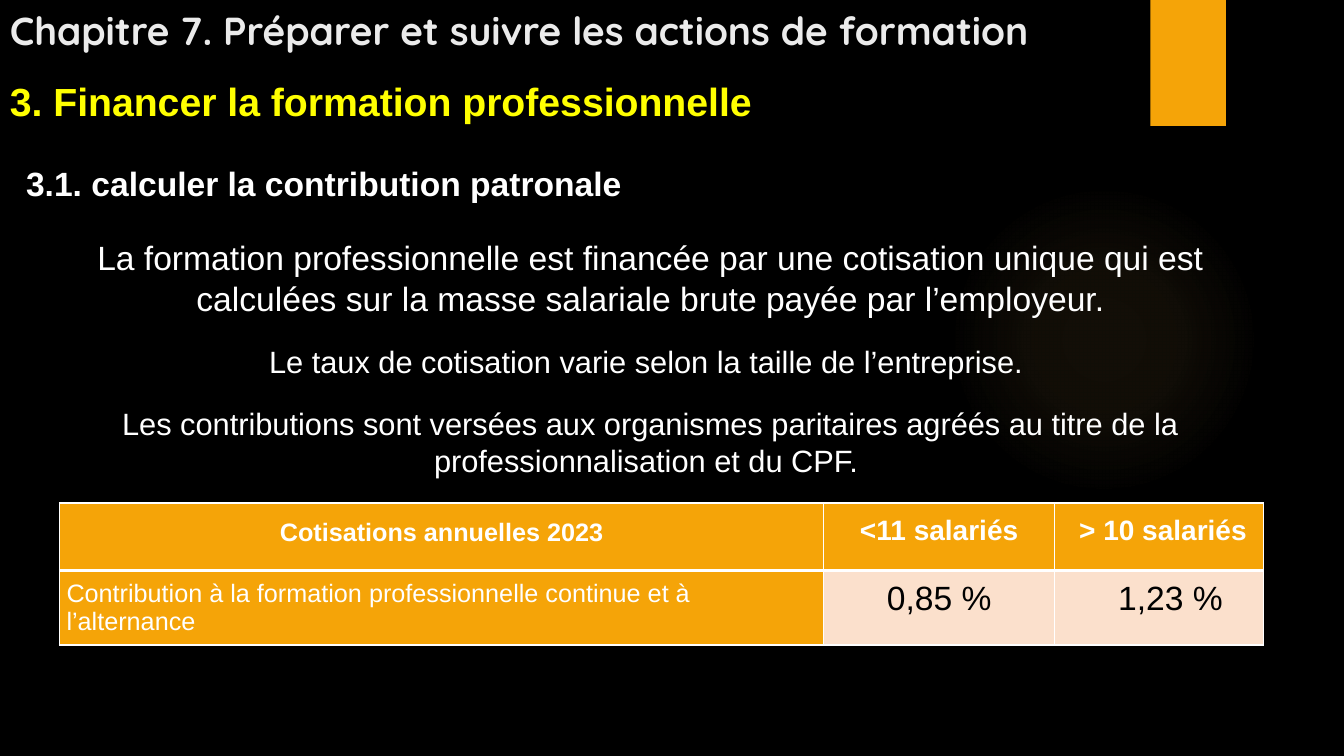
from lxml import etree
from pptx import Presentation
from pptx.dml.color import RGBColor
from pptx.enum.shapes import MSO_SHAPE
from pptx.enum.text import MSO_ANCHOR, PP_ALIGN
from pptx.oxml import parse_xml
from pptx.oxml.ns import nsdecls, qn
from pptx.util import Inches, Pt

LEFT, CENTER, JUSTIFY = PP_ALIGN.LEFT, PP_ALIGN.CENTER, PP_ALIGN.JUSTIFY
TOP, MIDDLE, BOTTOM = MSO_ANCHOR.TOP, MSO_ANCHOR.MIDDLE, MSO_ANCHOR.BOTTOM
RECT, OVAL = MSO_SHAPE.RECTANGLE, MSO_SHAPE.OVAL

COLORS = {
    "black": "000000", "white": "FFFFFF", "title": "EBEBEB", "yellow": "FFFF00",
    "orange": "F5A408", "peach": "FBE0CC", "glow": "FAC96A",
}
HEADINGS = [
    ((0, 0, 12.9, 0.58), "Chapitre 7. Préparer et suivre les actions de formation",
     dict(size=27.9, font="Quicksand", color="title", bold=True)),
    ((0, 0.71, 12.9, 0.57), "3. Financer la formation professionnelle",
     dict(size=28, color="yellow", bold=True)),
]
BODY_BOX = (0.16, 1.57, 12.58, 3.26)
BODY = [
    ("3.1. calculer la contribution patronale ",
     dict(size=24, bold=True, align=JUSTIFY, after=6)),
    ("La formation professionnelle est financée par une cotisation unique qui est "
     "calculées sur la masse salariale brute payée par l’employeur.",
     dict(size=24, align=CENTER, before=18)),
    ("Le taux de cotisation varie selon la taille de l’entreprise. ",
     dict(size=22, align=CENTER, before=18)),
    ("Les contributions sont versées aux organismes paritaires agréés au titre de la "
     "professionnalisation et du CPF. ",
     dict(size=22, align=CENTER, before=18)),
]
TABLE_BOX = (0.59, 4.99, 11.94, 1.41)
COL_WIDTHS = [7.58, 2.29, 2.07]
ROW_HEIGHTS = [0.67, 0.74]
HEADER = dict(bold=True, align=CENTER, line=14.4)
RATE = dict(size=24, color="black", line=14.4)
ROWS = [
    [("Cotisations annuelles 2023", "orange", 0.07, dict(HEADER, size=18)),
     ("<11 salariés", "orange", 0.07, dict(HEADER, size=20)),
     ("> 10 salariés", "orange", 0.15, dict(HEADER, size=20))],
    [("Contribution à la formation professionnelle continue et à l’alternance",
      "orange", 0.07, dict(size=18)),
     ("0,85 %", "peach", 0.07, dict(RATE, align=CENTER)),
     ("1,23 %", "peach", 0.63, RATE)],
]
GLOW_STOPS = [(0, 7), (36, 6), (69, 0)]


def rgb(name):
    return RGBColor.from_string(COLORS[name])


def box(at):
    return [Inches(v) for v in at]


def write(p, text, size=18, font="Arial", color="white", bold=False,
          align=LEFT, before=0, after=0, line=None):
    p.alignment = align
    p.space_before, p.space_after = Pt(before), Pt(after)
    if line:
        p.line_spacing = Pt(line)
    r = p.add_run()
    r.text = text
    r.font.size, r.font.name, r.font.bold = Pt(size), font, bold
    r.font.color.rgb = rgb(color)


def add_frame(slide, at, anchor):
    tf = slide.shapes.add_textbox(*box(at)).text_frame
    tf.word_wrap = True
    tf.vertical_anchor = anchor
    return tf


def add_plain(slide, kind, at):
    sp = slide.shapes.add_shape(kind, *box(at))
    sp.shadow.inherit = False
    sp.line.fill.background()
    return sp


def add_glow(slide):
    sp = add_plain(slide, OVAL, (9.41, 1.83, 3.08, 3.08))
    stops = "".join(
        f'<a:gs pos="{pos * 1000}"><a:srgbClr val="{COLORS["glow"]}">'
        f'<a:alpha val="{alpha * 1000}"/></a:srgbClr></a:gs>'
        for pos, alpha in GLOW_STOPS)
    grad = parse_xml(
        f'<a:gradFill {nsdecls("a")}><a:gsLst>{stops}</a:gsLst><a:path path="circle">'
        '<a:fillToRect l="50000" t="50000" r="50000" b="50000"/></a:path></a:gradFill>')
    sp._element.spPr.find(qn("a:prstGeom")).addnext(grad)


def add_tab(slide):
    sp = add_plain(slide, RECT, (11.41, 0, 0.75, 1.25))
    sp.fill.solid()
    sp.fill.fore_color.rgb = rgb("orange")
    effects = sp._element.spPr.find(qn("a:effectLst"))
    effects.append(parse_xml(
        f'<a:outerShdw {nsdecls("a")} blurRad="{Pt(3)}" dist="{Pt(2)}" dir="5400000">'
        f'<a:srgbClr val="{COLORS["black"]}"><a:alpha val="45000"/></a:srgbClr>'
        '</a:outerShdw>'))


def set_borders(cell, widths):
    tcPr = cell._tc.get_or_add_tcPr()
    for i, (side, width) in enumerate(widths.items()):
        ln = etree.Element(qn(f"a:ln{side}"), w=str(Pt(width)))
        fill = etree.SubElement(ln, qn("a:solidFill"))
        etree.SubElement(fill, qn("a:srgbClr"), val=COLORS["white"])
        tcPr.insert(i, ln)


def add_rates(slide):
    table = slide.shapes.add_table(len(ROWS), len(COL_WIDTHS), *box(TABLE_BOX)).table
    for col, width in zip(table.columns, COL_WIDTHS):
        col.width = Inches(width)
    for i, cells in enumerate(ROWS):
        table.rows[i].height = Inches(ROW_HEIGHTS[i])
        for j, (text, fill, left, style) in enumerate(cells):
            cell = table.cell(i, j)
            cell.margin_left, cell.margin_right = Inches(left), Inches(0.07)
            cell.margin_top = cell.margin_bottom = 0
            cell.vertical_anchor = MIDDLE
            cell.fill.solid()
            cell.fill.fore_color.rgb = rgb(fill)
            set_borders(cell, {"L": 1, "R": 1, "T": 3 if i else 1, "B": 1 if i else 3})
            write(cell.text_frame.paragraphs[0], text, **style)


def main():
    prs = Presentation()
    prs.slide_width, prs.slide_height = Inches(13.33), Inches(7.5)
    slide = prs.slides.add_slide(prs.slide_layouts[6])
    slide.background.fill.solid()
    slide.background.fill.fore_color.rgb = rgb("black")
    add_glow(slide)
    add_tab(slide)
    for at, text, style in HEADINGS:
        write(add_frame(slide, at, BOTTOM).paragraphs[0], text, **style)
    tf = add_frame(slide, BODY_BOX, TOP)
    for i, (text, style) in enumerate(BODY):
        write(tf.add_paragraph() if i else tf.paragraphs[0], text, **style)
    add_rates(slide)
    prs.save("out.pptx")


if __name__ == "__main__":
    main()
